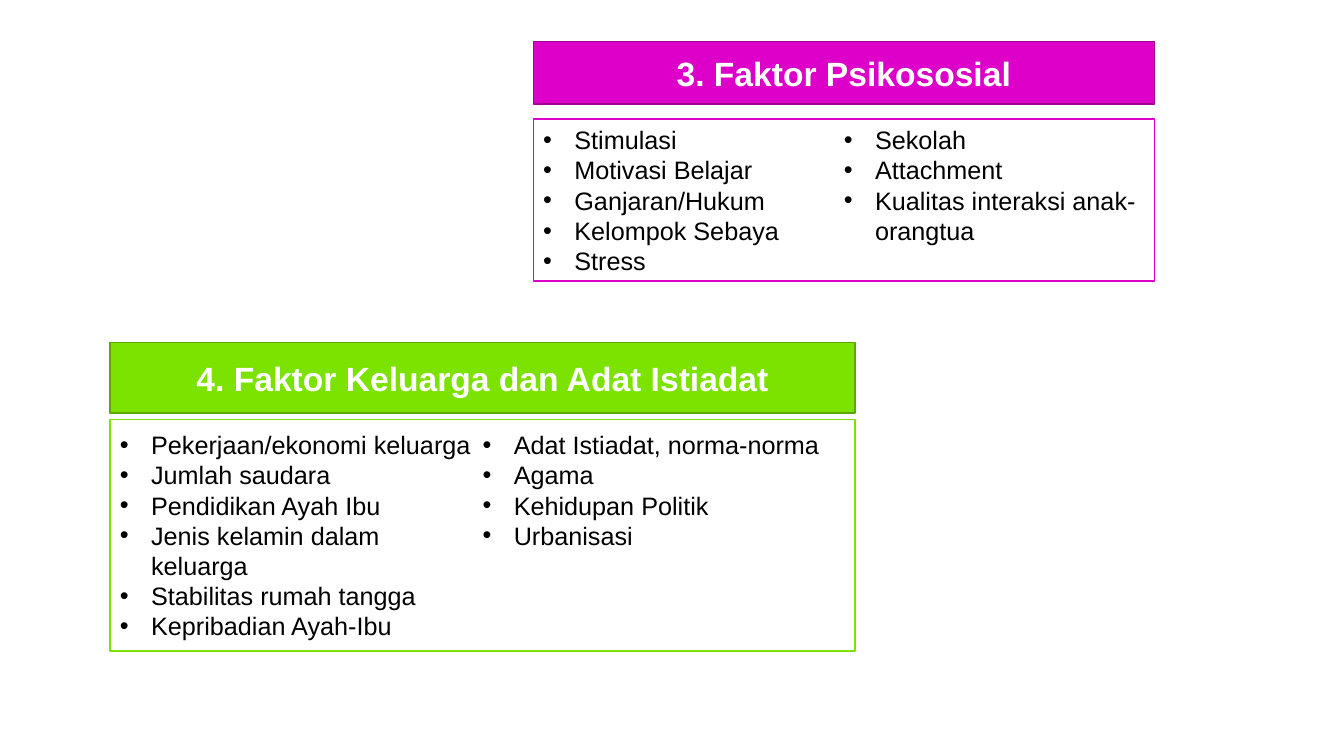
from pptx import Presentation
from pptx.dml.color import RGBColor
from pptx.enum.shapes import MSO_SHAPE
from pptx.enum.text import MSO_ANCHOR, PP_ALIGN
from pptx.util import Inches, Pt
from lxml import etree

RECTANGLE = MSO_SHAPE.RECTANGLE
MIDDLE = MSO_ANCHOR.MIDDLE
LEFT, CENTER = PP_ALIGN.LEFT, PP_ALIGN.CENTER
DRAWING_NS = "{http://schemas.openxmlformats.org/drawingml/2006/main}"
SLIDE_WIDTH, SLIDE_HEIGHT = Inches(13.33), Inches(7.5)
INDENT = Inches(0.31)

COLORS = {
    "magenta": "DC00C8",
    "magenta_edge": "A30094",
    "green": "7CE200",
    "green_edge": "5CA700",
    "white": "FFFFFF",
    "black": "000000",
}
HEADING_FORMAT = {"name": "Arial", "size": Pt(24), "bold": True}
FACTOR_FORMAT = {"name": "Arial", "size": Pt(18), "bold": False}

PANELS = [
    {
        "box": (39.68, 5.47, 46.21, 31.73),
        "heading_share": 26.05,
        "list_share": 67.65,
        "color": "magenta",
        "heading": "3. Faktor Psikososial",
        "factors": [
            "Stimulasi", "Motivasi Belajar", "Ganjaran/Hukum",
            "Kelompok Sebaya", "Stress", "Sekolah", "Attachment",
            "Kualitas interaksi anak-orangtua",
        ],
    },
    {
        "box": (8.18, 45.33, 55.44, 40.8),
        "heading_share": 22.88,
        "list_share": 75.16,
        "color": "green",
        "heading": "4. Faktor Keluarga dan Adat Istiadat",
        "factors": [
            "Pekerjaan/ekonomi keluarga", "Jumlah saudara",
            "Pendidikan Ayah Ibu", "Jenis kelamin dalam keluarga",
            "Stabilitas rumah tangga", "Kepribadian Ayah-Ibu",
            "Adat Istiadat, norma-norma", "Agama", "Kehidupan Politik",
            "Urbanisasi",
        ],
    },
]


def rgb(color):
    return RGBColor.from_string(COLORS[color])


def share(percent, whole):
    return round(whole * percent / 100)


def add_block(slide, box, fill, edge):
    block = slide.shapes.add_shape(RECTANGLE, *box)
    block.shadow.inherit = False
    block.fill.solid()
    block.fill.fore_color.rgb = rgb(fill)
    block.line.color.rgb = rgb(edge)
    block.line.width = Pt(1)
    block.text_frame.word_wrap = True
    block.text_frame.vertical_anchor = MIDDLE
    return block.text_frame


def write(paragraph, text, alignment, color, font_format):
    paragraph.text = text
    paragraph.alignment = alignment
    font = paragraph.runs[0].font
    for attribute, value in font_format.items():
        setattr(font, attribute, value)
    font.color.rgb = rgb(color)


def add_bullet(paragraph):
    properties = paragraph._p.get_or_add_pPr()
    properties.set("marL", str(INDENT))
    properties.set("indent", str(-INDENT))
    etree.SubElement(properties, DRAWING_NS + "buFont", typeface="Arial")
    etree.SubElement(properties, DRAWING_NS + "buChar", char="•")


def add_panel(slide, panel):
    left, top, width, height = (
        share(percent, whole)
        for percent, whole in zip(panel["box"], (SLIDE_WIDTH, SLIDE_HEIGHT) * 2)
    )
    color = panel["color"]
    heading_height = share(panel["heading_share"], height)
    list_height = share(panel["list_share"], height)

    heading = add_block(slide, (left, top, width, heading_height), color, color + "_edge")
    write(heading.paragraphs[0], panel["heading"], CENTER, "white", HEADING_FORMAT)

    list_top = top + height - list_height
    factors = add_block(slide, (left, list_top, width, list_height), "white", color)
    factors._txBody.bodyPr.set("numCol", "2")
    for index, factor in enumerate(panel["factors"]):
        paragraph = factors.add_paragraph() if index else factors.paragraphs[0]
        add_bullet(paragraph)
        write(paragraph, factor, LEFT, "black", FACTOR_FORMAT)


def main():
    presentation = Presentation()
    presentation.slide_width = SLIDE_WIDTH
    presentation.slide_height = SLIDE_HEIGHT
    slide = presentation.slides.add_slide(presentation.slide_layouts[6])
    for panel in PANELS:
        add_panel(slide, panel)
    presentation.save("out.pptx")


if __name__ == "__main__":
    main()
